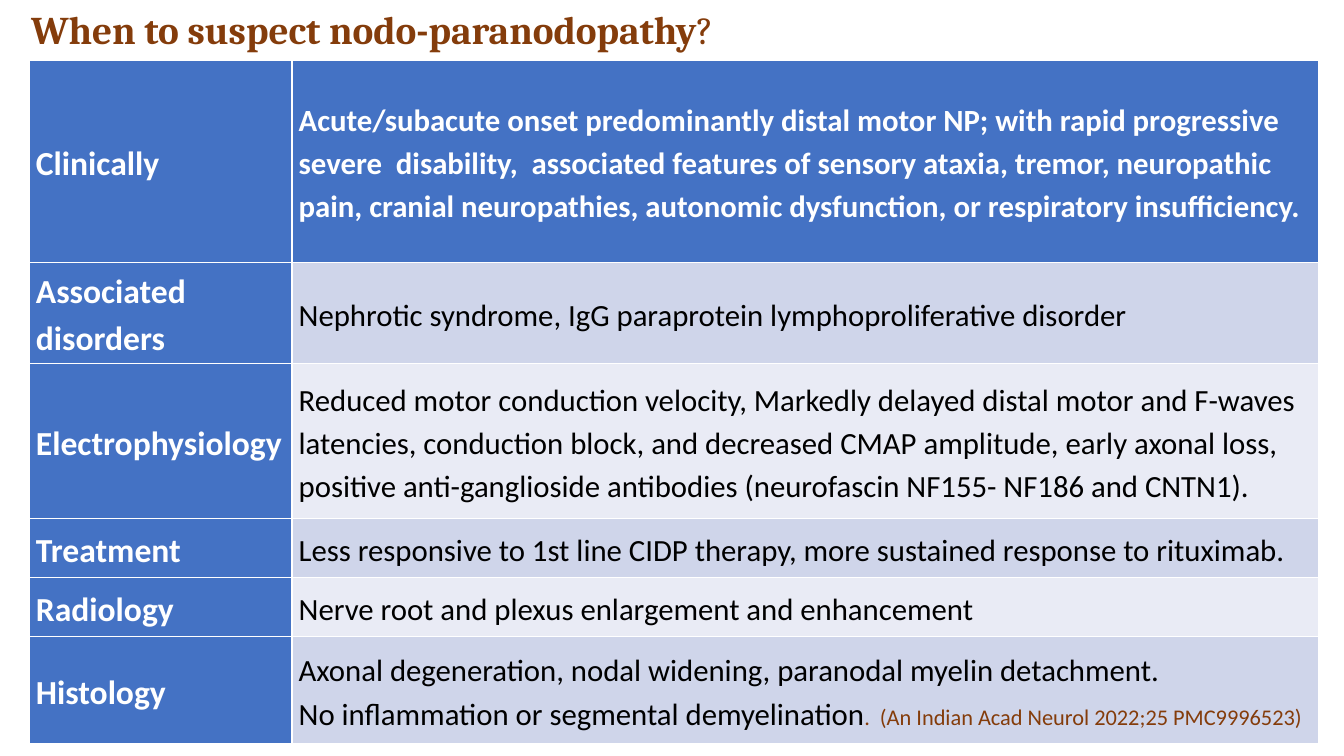
import pptx
import pptx.util
import pptx.dml.color
import pptx.enum.text

Pt = pptx.util.Pt
MIDDLE = pptx.enum.text.MSO_ANCHOR.MIDDLE
COLORS = {"blue": "4472C4", "band_dark": "CFD5EA", "band_light": "E9EBF5",
          "white": "FFFFFF", "black": "000000", "brown": "843C0B"}

# Row height, label, and paragraphs of each table row
ROWS = [
    (144.7, "Clinically", [
        "Acute/subacute onset predominantly distal motor NP; with rapid progressive "
        "severe  disability,  associated features of sensory ataxia, tremor, neuropathic "
        "pain, cranial neuropathies, autonomic dysfunction, or respiratory insufficiency."]),
    (71, "Associated disorders", [
        "Nephrotic syndrome, IgG paraprotein lymphoproliferative disorder"]),
    (110.9, "Electrophysiology", [
        "Reduced motor conduction velocity, Markedly delayed distal motor and F-waves "
        "latencies, conduction block, and decreased CMAP amplitude, early axonal loss, "
        "positive anti-ganglioside antibodies (neurofascin NF155- NF186 and CNTN1)."]),
    (42.2, "Treatment", [
        "Less responsive to 1st line CIDP therapy, more sustained response to rituximab."]),
    (42.2, "Radiology", ["Nerve root and plexus enlargement and enhancement"]),
    (76.3, "Histology", [
        "Axonal degeneration, nodal widening, paranodal myelin detachment.",
        "No inflammation or segmental demyelination"]),
]
CITATION = ".  (An Indian Acad Neurol 2022;25 PMC9996523)"


def style_font(font, name, size, color, bold):
    font.name = name
    font.size = Pt(size)
    font.bold = bold
    font.color.rgb = pptx.dml.color.RGBColor.from_string(COLORS[color])


def fill_cell(cell, texts, size, color, bold, fill):
    cell.fill.solid()
    cell.fill.fore_color.rgb = pptx.dml.color.RGBColor.from_string(COLORS[fill])
    cell.vertical_anchor = MIDDLE
    cell.margin_left = cell.margin_right = Pt(4.8)
    cell.margin_top = cell.margin_bottom = Pt(2.4)
    cell.text = "\n".join(texts)
    for para in cell.text_frame.paragraphs:
        para.line_spacing = 1.15
        style_font(para.font, "Calibri", size, color, bold)


deck = pptx.Presentation()
deck.slide_width, deck.slide_height = Pt(960), Pt(540)
page = deck.slides.add_slide(deck.slide_layouts[5])

# Title
title = page.shapes.title
title.left, title.top, title.width, title.height = Pt(15), Pt(0), Pt(710), Pt(41)
title.text_frame.vertical_anchor = MIDDLE
title.text_frame.auto_size = pptx.enum.text.MSO_AUTO_SIZE.NONE
heading = title.text_frame.paragraphs[0]
heading.alignment = pptx.enum.text.PP_ALIGN.LEFT
style_font(heading.font, "Cambria", 28, "brown", True)
heading.add_run().text = "When to suspect nodo-paranodopathy"
question_mark = heading.add_run()
question_mark.text = "?"
question_mark.font.bold = False

# Table of diagnostic clues
table = page.shapes.add_table(len(ROWS), 2, Pt(20.9), Pt(42.8), Pt(921.3),
                              Pt(sum(row[0] for row in ROWS))).table
table.first_col = True
table.columns[0].width, table.columns[1].width = Pt(187.7), Pt(733.6)
for index, (height, label, texts) in enumerate(ROWS):
    table.rows[index].height = Pt(height)
    fill_cell(table.cell(index, 0), [label], 24, "white", True, "blue")
    if index == 0:
        color, fill = "white", "blue"
    else:
        color, fill = "black", "band_dark" if index % 2 else "band_light"
    fill_cell(table.cell(index, 1), texts, 22, color, index == 0, fill)

# Citation after the last finding
span = table.cell(len(ROWS) - 1, 1).text_frame.paragraphs[-1].add_run()
span.text = CITATION
style_font(span.font, "Calibri", 16, "brown", False)

deck.save("out.pptx")
